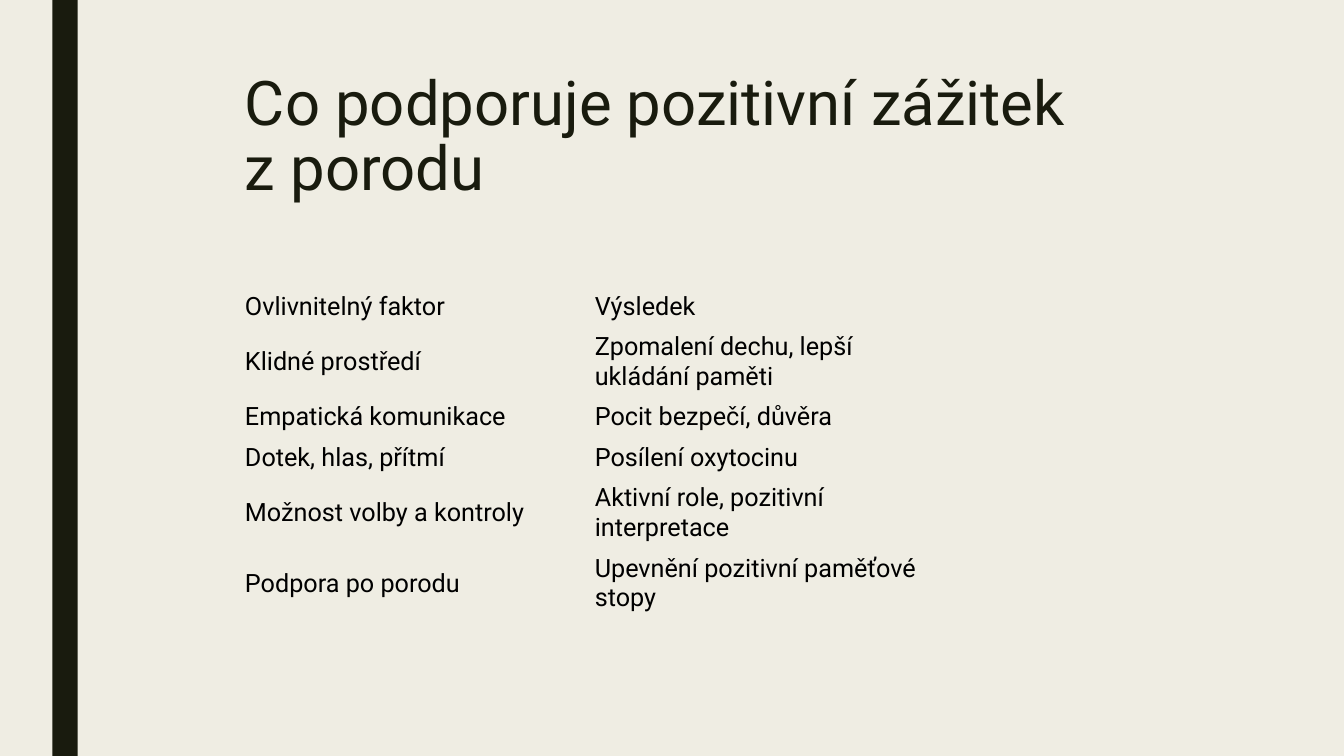
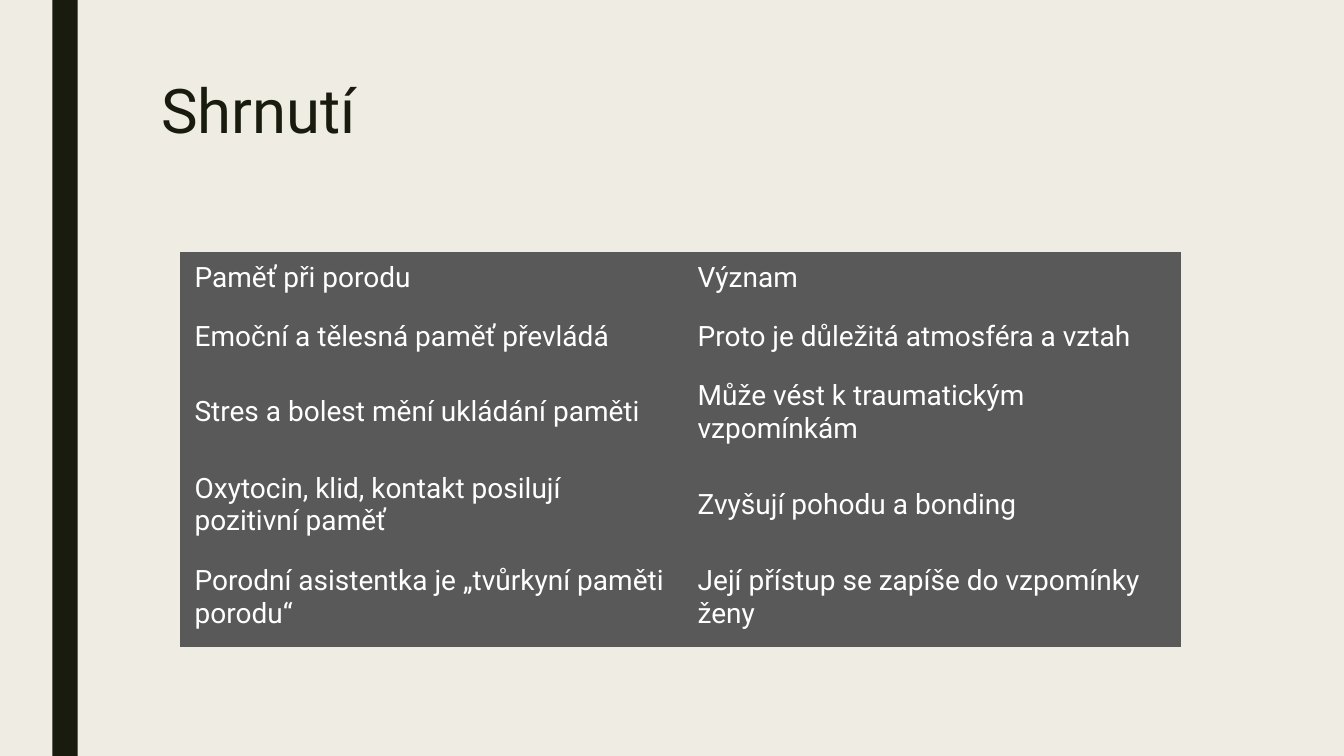
import pptx
import pptx.util
import pptx.dml.color
import pptx.enum.shapes
import pptx.enum.text
from pptx.util import Inches

COLORS = {
    "background": "EFEDE3",
    "dark": "191B0E",
    "black": "000000",
    "white": "FFFFFF",
    "panel": "595959",
}
FONT = "Roboto"
PLAIN_TABLE_STYLE = "{2D5ABB26-0587-4C30-8999-92F81FD0307C}"

FACTORS = [
    ("Ovlivnitelný faktor", "Výsledek"),
    ("Klidné prostředí", "Zpomalení dechu, lepší ukládání paměti"),
    ("Empatická komunikace", "Pocit bezpečí, důvěra"),
    ("Dotek, hlas, přítmí", "Posílení oxytocinu"),
    ("Možnost volby a kontroly", "Aktivní role, pozitivní interpretace"),
    ("Podpora po porodu", "Upevnění pozitivní paměťové stopy"),
]
SUMMARY = [
    ("Paměť při porodu", "Význam"),
    ("Emoční a tělesná paměť převládá", "Proto je důležitá atmosféra a vztah"),
    ("Stres a bolest mění ukládání paměti", "Může vést k traumatickým vzpomínkám"),
    ("Oxytocin, klid, kontakt posilují pozitivní paměť", "Zvyšují pohodu a bonding"),
    ("Porodní asistentka je „tvůrkyní paměti porodu“",
     "Její přístup se zapíše do vzpomínky ženy"),
]


def rgb(name):
    return pptx.dml.color.RGBColor.from_string(COLORS[name])


def write_text(text_frame, text, size, color, line_spacing=None):
    text_frame.word_wrap = True
    paragraph = text_frame.paragraphs[0]
    paragraph.alignment = pptx.enum.text.PP_ALIGN.LEFT
    if line_spacing:
        paragraph.line_spacing = line_spacing
    run = paragraph.add_run()
    run.text = text
    run.font.name = FONT
    run.font.size = pptx.util.Pt(size)
    run.font.color.rgb = rgb(color)


def add_side_band(slide, height):
    band = slide.shapes.add_shape(
        pptx.enum.shapes.MSO_SHAPE.RECTANGLE, Inches(0.52), 0, Inches(0.25), height)
    band.shadow.inherit = False
    band.fill.solid()
    band.fill.fore_color.rgb = rgb("dark")
    band.line.fill.background()


def place_title(slide, text, box):
    title = slide.shapes.title
    title.left, title.top, title.width, title.height = map(Inches, box)
    text_frame = title.text_frame
    text_frame.auto_size = pptx.enum.text.MSO_AUTO_SIZE.NONE
    text_frame.vertical_anchor = pptx.enum.text.MSO_ANCHOR.TOP
    text_frame.margin_right = Inches(0.2)
    write_text(text_frame, text, size=44, color="dark", line_spacing=0.89)


def add_titled_slide(presentation, title, title_box):
    slide = presentation.slides.add_slide(presentation.slide_layouts[5])
    add_side_band(slide, presentation.slide_height)
    place_title(slide, title, title_box)
    return slide


def add_text_table(slide, rows, left, top, widths, heights, size, color,
                   fill=None, margins=(0.1, 0.05, 0.1, 0.05)):
    """Add an unstyled table; margins are left, top, right, bottom in inches."""
    frame = slide.shapes.add_table(
        len(rows), len(widths), Inches(left), Inches(top),
        Inches(sum(widths)), Inches(sum(heights)))
    table = frame.table
    table.first_row = table.horz_banding = False
    for style in frame.element.iter(pptx.oxml.ns.qn("a:tableStyleId")):
        style.text = PLAIN_TABLE_STYLE
    for column, width in zip(table.columns, widths):
        column.width = Inches(width)
    for row, height, texts in zip(table.rows, heights, rows):
        row.height = Inches(height)
        for cell, text in zip(row.cells, texts):
            (cell.margin_left, cell.margin_top,
             cell.margin_right, cell.margin_bottom) = map(Inches, margins)
            cell.vertical_anchor = pptx.enum.text.MSO_ANCHOR.MIDDLE
            if fill:
                cell.fill.solid()
                cell.fill.fore_color.rgb = rgb(fill)
            else:
                cell.fill.background()
            write_text(cell.text_frame, text, size, color)


def add_factors_slide(presentation):
    slide = add_titled_slide(
        presentation, "Co podporuje pozitivní zážitek z porodu", (2.33, 0.67, 8.74, 1.44))
    add_text_table(slide, FACTORS, 2.33, 2.84, widths=(3.47, 3.47),
                   heights=(0.4, 0.7, 0.4, 0.4, 0.7, 0.7), size=18, color="black")


def add_summary_slide(presentation):
    slide = add_titled_slide(presentation, "Shrnutí", (1.5, 0.75, 10.5, 1.62))
    add_text_table(slide, SUMMARY, 1.79, 2.5, widths=(4.99, 4.93),
                   heights=(0.58, 0.58, 0.92, 0.92, 0.92), size=20, color="white",
                   fill="panel", margins=(0.14, 0.07, 0.14, 0.13))


def main():
    presentation = pptx.Presentation()
    presentation.slide_width = Inches(13.33)
    presentation.slide_height = Inches(7.5)
    background = presentation.slide_master.background.fill
    background.solid()
    background.fore_color.rgb = rgb("background")
    add_factors_slide(presentation)
    add_summary_slide(presentation)
    presentation.save("out.pptx")


if __name__ == "__main__":
    main()
